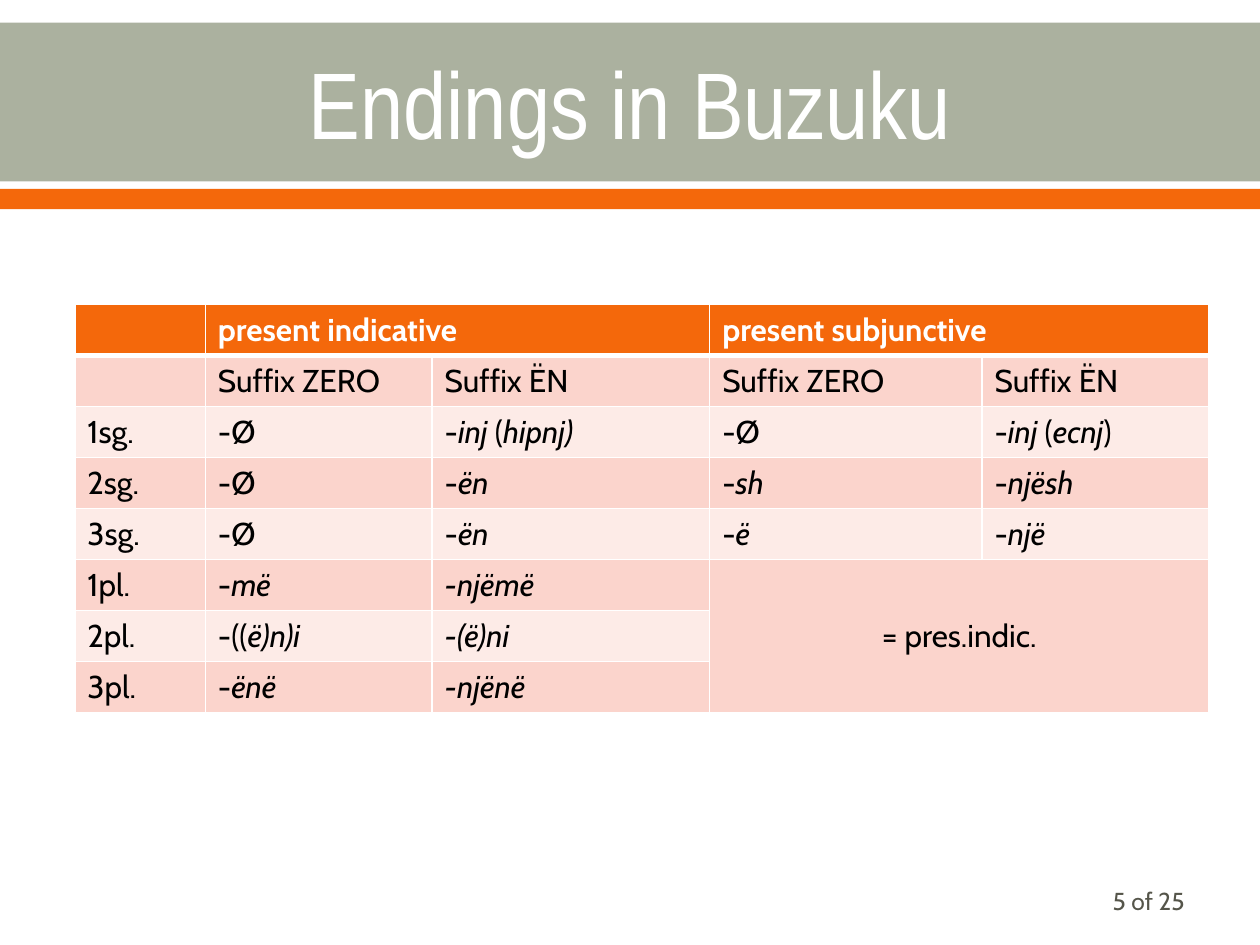
from lxml import etree
from pptx import Presentation
from pptx.dml.color import RGBColor
from pptx.enum import shapes, text
from pptx.oxml.ns import qn
from pptx.util import Pt

# Content: parts between asterisks are italic
TITLE = "Endings in Buzuku"
PAGE = "5 of 25"
ROWS = [
    ["", "present indicative", "", "present subjunctive", ""],
    ["", "Suffix ZERO", "Suffix ËN", "Suffix ZERO", "Suffix ËN"],
    ["1sg.", "-Ø", "-*inj *(*hipnj)*", "-Ø", "-*inj *(*ecnj*)"],
    ["2sg.", "-Ø", "-*ën*", "-*sh*", "-*njësh*"],
    ["3sg.", "-Ø", "-*ën*", "-*ë*", "-*një*"],
    ["1pl.", "-*më*", "*-njëmë*", "= pres.indic.", ""],
    ["2pl.", "-((*ë)n)i*", "*-(ë)ni*", "", ""],
    ["3pl.", "-*ënë*", "*-njënë*", "", ""],
]
MERGES = [((0, 1), (0, 2)), ((0, 3), (0, 4)), ((5, 3), (7, 4))]
SHARED_CELL = (5, 3)

THEME = {
    "sage": "ABB19F", "orange": "F4680B", "white": "FFFFFF", "black": "000000",
    "gray": "55554A", "bands": ("FDEBE7", "FBD4CC"),
    "title_font": "Arial Narrow", "body_font": "Cabin",
    "title_size": 54, "body_size": 18, "page_size": 14,
}

# Layout in points
WIDTH, HEIGHT = 720, 540
BANDS = [(13, 90.7, "sage"), (108, 11.5, "orange")]
TABLE_LEFT, TABLE_TOP, ROW_HEIGHT = 42.75, 173.9, 29.16
COLUMNS = [74.6, 129.6, 158.6, 155.6, 129.6]


def write(frame, content, size=THEME["body_size"], font=THEME["body_font"],
          color=THEME["black"], bold=False, align=text.PP_ALIGN.LEFT,
          anchor=text.MSO_ANCHOR.TOP):
    frame.word_wrap = True
    frame.vertical_anchor = anchor
    paragraph = frame.paragraphs[0]
    paragraph.alignment = align
    for index, part in enumerate(content.split("*")):
        if part:
            run = paragraph.add_run()
            run.text = part
            run.font.size, run.font.name = Pt(size), font
            run.font.bold, run.font.italic = bold, index % 2 == 1
            run.font.color.rgb = RGBColor.from_string(color)


def add_text(slide, box, content, **style):
    shape = slide.shapes.add_textbox(*map(Pt, box))
    write(shape.text_frame, content, anchor=text.MSO_ANCHOR.MIDDLE, **style)


def set_borders(cell, **widths):
    properties = cell._tc.get_or_add_tcPr()
    for side in "LRTB":
        line = etree.SubElement(properties, qn(f"a:ln{side}"),
                                w=str(Pt(widths.get(side, 1))))
        fill = etree.SubElement(line, qn("a:solidFill"))
        etree.SubElement(fill, qn("a:srgbClr"), val=THEME["white"])


def add_endings_table(slide):
    frame = slide.shapes.add_table(
        len(ROWS), len(COLUMNS), Pt(TABLE_LEFT), Pt(TABLE_TOP),
        Pt(sum(COLUMNS)), Pt(ROW_HEIGHT * len(ROWS)))
    table = frame.table
    table.horz_banding = False
    table.first_row = False
    for column, width in zip(table.columns, COLUMNS):
        column.width = Pt(width)
    for start, end in MERGES:
        table.cell(*start).merge(table.cell(*end))
    for r, row in enumerate(ROWS):
        table.rows[r].height = Pt(ROW_HEIGHT)
        for c, content in enumerate(row):
            cell = table.cell(r, c)
            header = r == 0
            # The rule below the header is thicker
            set_borders(cell, B=3 if header else 1, T=3 if r == 1 else 1)
            cell.fill.solid()
            cell.fill.fore_color.rgb = RGBColor.from_string(
                THEME["orange"] if header else THEME["bands"][r % 2])
            shared = (r, c) == SHARED_CELL
            write(cell.text_frame, content, bold=header,
                  color=THEME["white" if header else "black"],
                  align=text.PP_ALIGN.CENTER if shared else text.PP_ALIGN.LEFT)
            cell.vertical_anchor = (text.MSO_ANCHOR.MIDDLE if shared
                                    else text.MSO_ANCHOR.TOP)


def main():
    presentation = Presentation()
    presentation.slide_width, presentation.slide_height = Pt(WIDTH), Pt(HEIGHT)
    slide = presentation.slides.add_slide(presentation.slide_layouts[6])

    # Title bands
    for top, height, color in BANDS:
        shape = slide.shapes.add_shape(shapes.MSO_SHAPE.RECTANGLE,
                                       0, Pt(top), Pt(WIDTH), Pt(height))
        shape.shadow.inherit = False
        shape.fill.solid()
        shape.fill.fore_color.rgb = RGBColor.from_string(THEME[color])
        shape.line.fill.background()

    add_text(slide, (36, 14.4, 648, 87.8), TITLE, size=THEME["title_size"],
             font=THEME["title_font"], color=THEME["white"],
             align=text.PP_ALIGN.CENTER)
    add_endings_table(slide)

    # Page number
    add_text(slide, (516, 500.5, 168, 28.8), PAGE, size=THEME["page_size"],
             color=THEME["gray"], align=text.PP_ALIGN.RIGHT)
    presentation.save("out.pptx")


if __name__ == "__main__":
    main()
